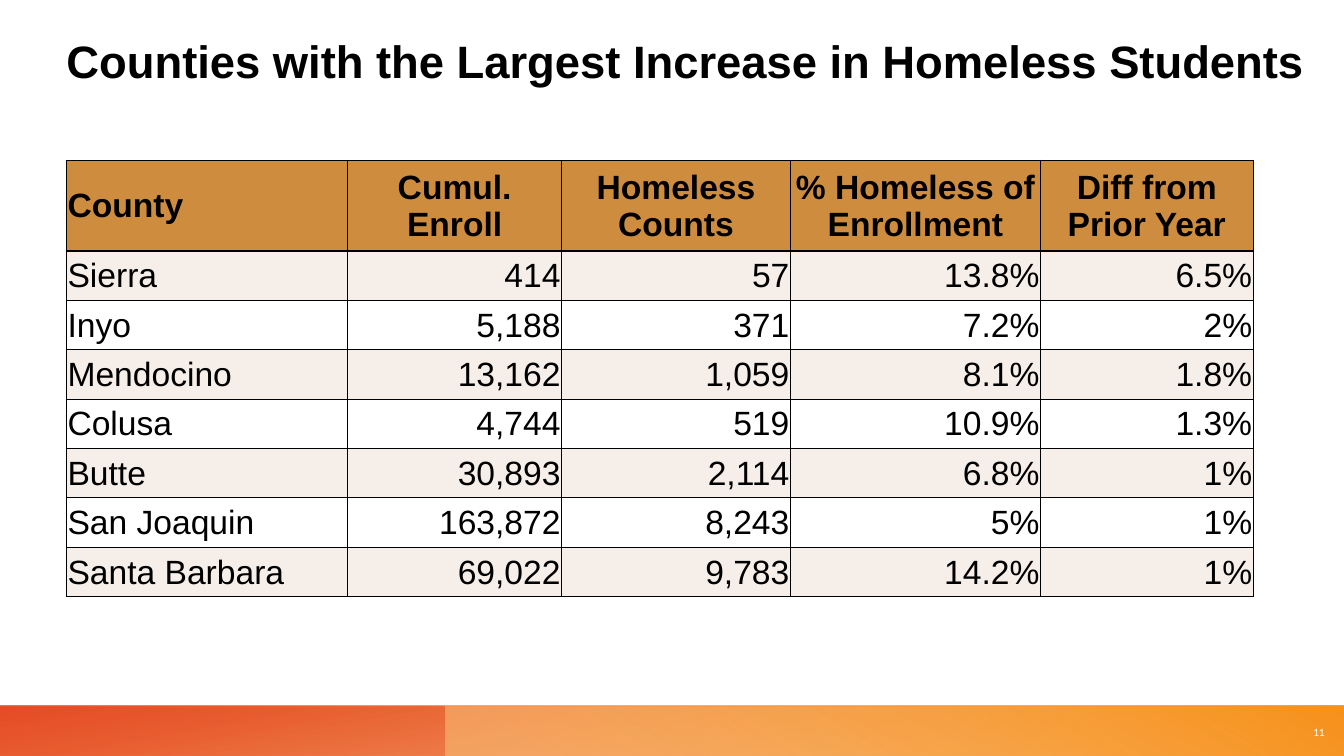
from lxml.etree import SubElement
from pptx import Presentation
from pptx.dml.color import RGBColor
from pptx.enum.shapes import MSO_SHAPE
from pptx.enum.text import MSO_ANCHOR, PP_ALIGN
from pptx.oxml import parse_xml
from pptx.oxml.ns import nsdecls, qn
from pptx.util import Inches, Pt

BLACK = RGBColor(0x00, 0x00, 0x00)
WHITE = RGBColor(0xFF, 0xFF, 0xFF)
BRONZE = RGBColor(0xCE, 0x8D, 0x3E)
CREAM = RGBColor(0xF6, 0xEE, 0xE8)
RUST = RGBColor(0xEC, 0x70, 0x16)
RED = RGBColor(0xE6, 0x48, 0x23)
PEACH = RGBColor(0xFB, 0xBE, 0x77)
ORANGE = RGBColor(0xF8, 0x93, 0x1D)

WIDTH, HEIGHT = 13.33, 7.5
TITLE = "Counties with the Largest Increase in Homeless Students"
COLUMN_WIDTHS = [2.79, 2.12, 2.27, 2.48, 2.11]
ROW_HEIGHTS = [0.9] + [0.49] * 7
ROWS = [
    ["County", "Cumul. Enroll", "Homeless Counts", "% Homeless of Enrollment", "Diff from Prior Year"],
    ["Sierra", "414", "57", "13.8%", "6.5%"],
    ["Inyo", "5,188", "371", "7.2%", "2%"],
    ["Mendocino", "13,162", "1,059", "8.1%", "1.8%"],
    ["Colusa", "4,744", "519", "10.9%", "1.3%"],
    ["Butte", "30,893", "2,114", "6.8%", "1%"],
    ["San Joaquin", "163,872", "8,243", "5%", "1%"],
    ["Santa Barbara", "69,022", "9,783", "14.2%", "1%"],
]


def write(tf, text, size=24, font="Arial", color=BLACK, bold=False, align=PP_ALIGN.LEFT):
    p = tf.paragraphs[0]
    p.alignment = align
    r = p.add_run()
    r.text = text
    r.font.size = Pt(size)
    r.font.name = font
    r.font.bold = bold
    r.font.color.rgb = color


def add_label(slide, box, text, margin=0.0, **style):
    tf = slide.shapes.add_textbox(*map(Inches, box)).text_frame
    tf.word_wrap = True
    tf.vertical_anchor = MSO_ANCHOR.MIDDLE
    tf.margin_left = tf.margin_right = Inches(margin)
    tf.margin_top = tf.margin_bottom = Inches(margin / 2)
    write(tf, text, **style)


def add_gradient_bar(slide, box, stops, angle, rotation=0):
    """Add a mirrored bar; stops are (position, colour, opacity), all in shares of one."""
    sp = slide.shapes.add_shape(MSO_SHAPE.RECTANGLE, *map(Inches, box))
    sp.shadow.inherit = False
    sp.line.fill.background()
    sp.rotation = rotation
    sp.element.spPr.find(qn("a:xfrm")).set("flipH", "1")
    sp.fill.gradient()
    sp.fill.gradient_angle = 360 - angle
    for stop, (position, color, _) in zip(sp.fill.gradient_stops, stops):
        stop.position = position
        stop.color.rgb = color
    for clr, (_, _, opacity) in zip(sp.element.xpath(".//a:gs/a:srgbClr"), stops):
        SubElement(clr, qn("a:alpha")).set("val", str(round(opacity * 100000)))


def add_footer(slide, box, number):
    left, top, width, height = box
    split = width * 0.3315
    for y in (top, top + 0.01):
        add_gradient_bar(slide, (left, y, width, height),
                         [(0.14, RUST, 0.28), (1, RED, 0.85)], 100, rotation=180)
        add_gradient_bar(slide, (left + split, y, width - split, height),
                         [(0.09, PEACH, 0.55), (0.99, ORANGE, 1)], 240)
    add_label(slide, (left + width * 0.957, top + 0.01, width * 0.036, height), str(number),
              margin=0.1, size=8, font="Calibri", color=WHITE, align=PP_ALIGN.RIGHT)


def add_borders(frame):
    for tc_pr in frame.element.xpath(".//a:tcPr"):
        for i, side in enumerate("LRTB"):
            tc_pr.insert(i, parse_xml(
                f'<a:ln{side} {nsdecls("a")} w="{Pt(1)}"><a:solidFill>'
                f'<a:srgbClr val="{BLACK}"/></a:solidFill></a:ln{side}>'))


def add_county_table(slide, box):
    frame = slide.shapes.add_table(len(ROWS), len(COLUMN_WIDTHS), *map(Inches, box))
    table = frame.table
    for column, width in zip(table.columns, COLUMN_WIDTHS):
        column.width = Inches(width)
    for row, height in zip(table.rows, ROW_HEIGHTS):
        row.height = Inches(height)
    for i, values in enumerate(ROWS):
        header = i == 0
        fill = BRONZE if header else (WHITE, CREAM)[i % 2]
        for j, value in enumerate(values):
            cell = table.cell(i, j)
            cell.fill.solid()
            cell.fill.fore_color.rgb = fill
            cell.vertical_anchor = MSO_ANCHOR.MIDDLE
            cell.margin_left = cell.margin_right = cell.margin_top = Inches(0.01)
            cell.margin_bottom = 0
            align = PP_ALIGN.LEFT if j == 0 else PP_ALIGN.CENTER if header else PP_ALIGN.RIGHT
            write(cell.text_frame, value, bold=header, align=align)
    add_borders(frame)


def main():
    prs = Presentation()
    prs.slide_width, prs.slide_height = Inches(WIDTH), Inches(HEIGHT)
    slide = prs.slides.add_slide(prs.slide_layouts[6])
    margin = 0.66
    add_footer(slide, (0, HEIGHT - 0.5, WIDTH, 0.5), 11)
    add_county_table(slide, (margin, 1.59, sum(COLUMN_WIDTHS), sum(ROW_HEIGHTS)))
    add_label(slide, (margin, 0.25, 12.34, 0.7), TITLE, size=32.4, bold=True)
    prs.save("out.pptx")


if __name__ == "__main__":
    main()
